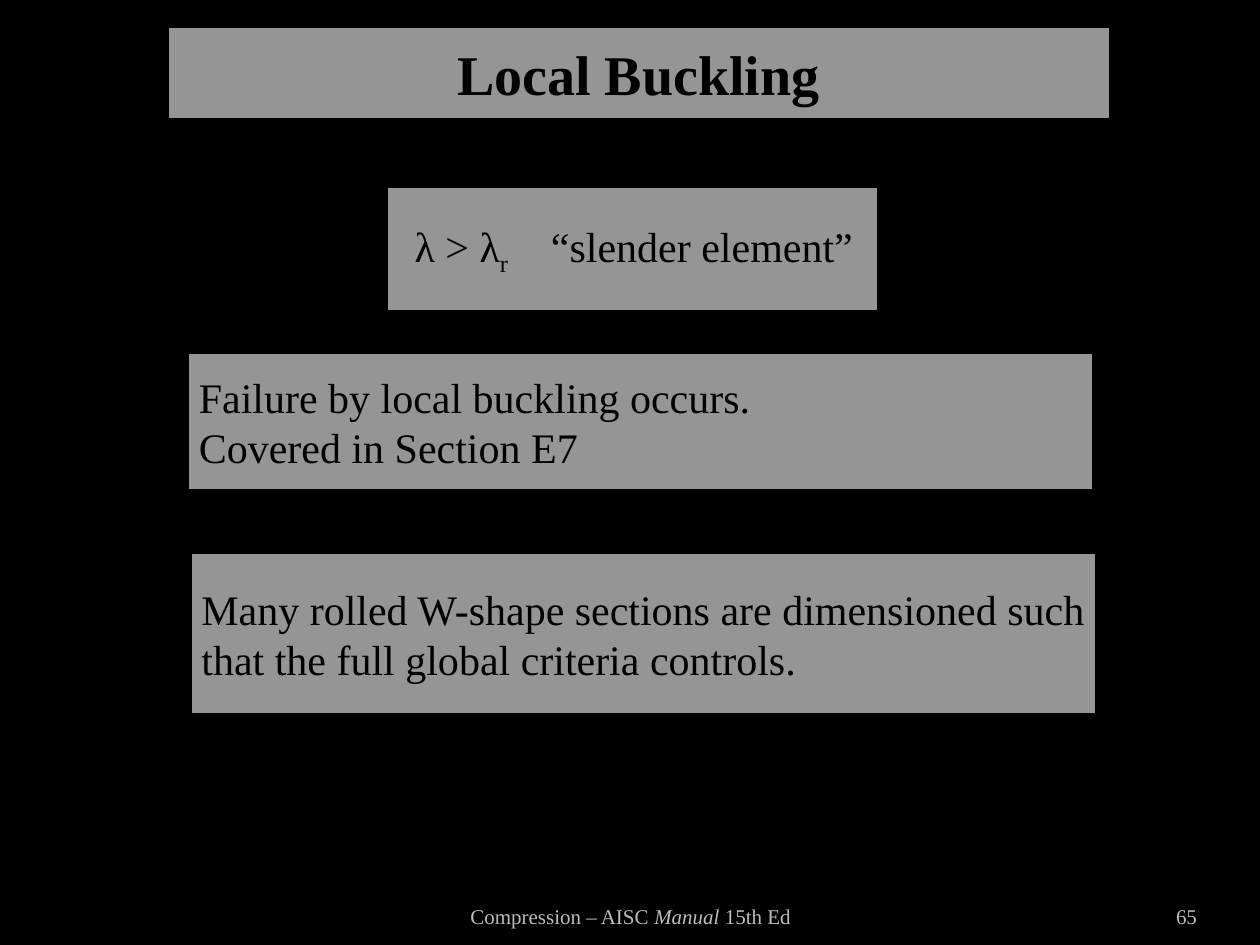
"""Build the Local Buckling slide: a title and three translucent panels on black."""
from dataclasses import dataclass

from lxml.etree import SubElement
from pptx import Presentation
from pptx.dml.color import RGBColor
from pptx.enum.shapes import MSO_SHAPE as Shape
from pptx.enum.text import MSO_ANCHOR as Anchor, PP_ALIGN as Align
from pptx.oxml.ns import qn
from pptx.util import Inches, Pt


@dataclass(frozen=True)
class Theme:
    font: str = "Times New Roman"
    black: RGBColor = RGBColor(0, 0, 0)
    panel: RGBColor = RGBColor(0xF2, 0xF2, 0xF2)
    muted: RGBColor = RGBColor(0xBC, 0xBC, 0xBC)
    panel_alpha: str = "62000"
    title: int = 32
    body: int = 24
    footer: int = 12
    border: int = 3


theme = Theme()


def write(box, lines, size, color, align, anchor, bold=False):
    frame = box.text_frame
    frame.word_wrap = True
    frame.vertical_anchor = anchor
    for index, pieces in enumerate(lines):
        para = frame.add_paragraph() if index else frame.paragraphs[0]
        para.alignment = align
        if any("\t" in piece for piece, _ in pieces):
            tabs = SubElement(para._p.get_or_add_pPr(), qn("a:tabLst"))
            SubElement(tabs, qn("a:tab"), pos=str(Inches(1)), algn="l")
        para.font.name = theme.font
        para.font.size = Pt(size)
        para.font.bold = bold
        para.font.color.rgb = color
        for piece, style in pieces:
            span = para.add_run()
            span.text = piece
            if style == "italic":
                span.font.italic = True
            elif style == "subscript":
                span._r.get_or_add_rPr().set("baseline", "-25000")
    return frame


deck = Presentation()
deck.slide_width, deck.slide_height = Inches(10), Inches(7.5)
page = deck.slides.add_slide(deck.slide_layouts[6])
page.background.fill.solid()
page.background.fill.fore_color.rgb = theme.black

criterion = [[("λ > λ", ""), ("r ", "subscript"), ("\t “slender element”", "")]]
failure = [[("Failure by local buckling occurs.", "")], [("Covered in Section E7", "")]]
rolled = [[("Many rolled W-shape sections are dimensioned such "
            "that the full global criteria controls.", "")]]
title = [[("Local Buckling", "")]]

panels = [
    ((3.06, 1.47, 3.92, 1.01), criterion, theme.body, Align.LEFT, 0.23),
    ((1.48, 2.79, 7.21, 1.11), failure, theme.body, Align.LEFT, 0.1),
    ((1.5, 4.38, 7.21, 1.3), rolled, theme.body, Align.LEFT, 0.1),
    ((1.32, 0.2, 7.5, 0.76), title, theme.title, Align.CENTER, 0.1),
]
for place, lines, size, align, inset in panels:
    panel = page.shapes.add_shape(Shape.RECTANGLE, *map(Inches, place))
    panel.shadow.inherit = False
    panel.fill.solid()
    panel.fill.fore_color.rgb = theme.panel
    tint = panel._element.spPr.find(qn("a:solidFill"))[0]
    SubElement(tint, qn("a:alpha"), val=theme.panel_alpha)
    panel.line.color.rgb = theme.black
    panel.line.width = Pt(theme.border)
    frame = write(panel, lines, size, theme.black, align, Anchor.MIDDLE, lines is title)
    frame.margin_left = Inches(inset)

reference = [[("Compression – AISC ", ""), ("Manual", "italic"), (" 15th Ed", "")]]
footers = [
    (3.42, 3.17, reference, Align.CENTER, 0.1),
    (8.67, 0.83, [[("65", "")]], Align.RIGHT, 0),
]
for left, width, lines, align, inset in footers:
    footer = page.shapes.add_textbox(*map(Inches, (left, 7.02, width, 0.4)))
    frame = write(footer, lines, theme.footer, theme.muted, align, Anchor.BOTTOM)
    frame.margin_left = frame.margin_right = Inches(inset)

deck.save("out.pptx")
